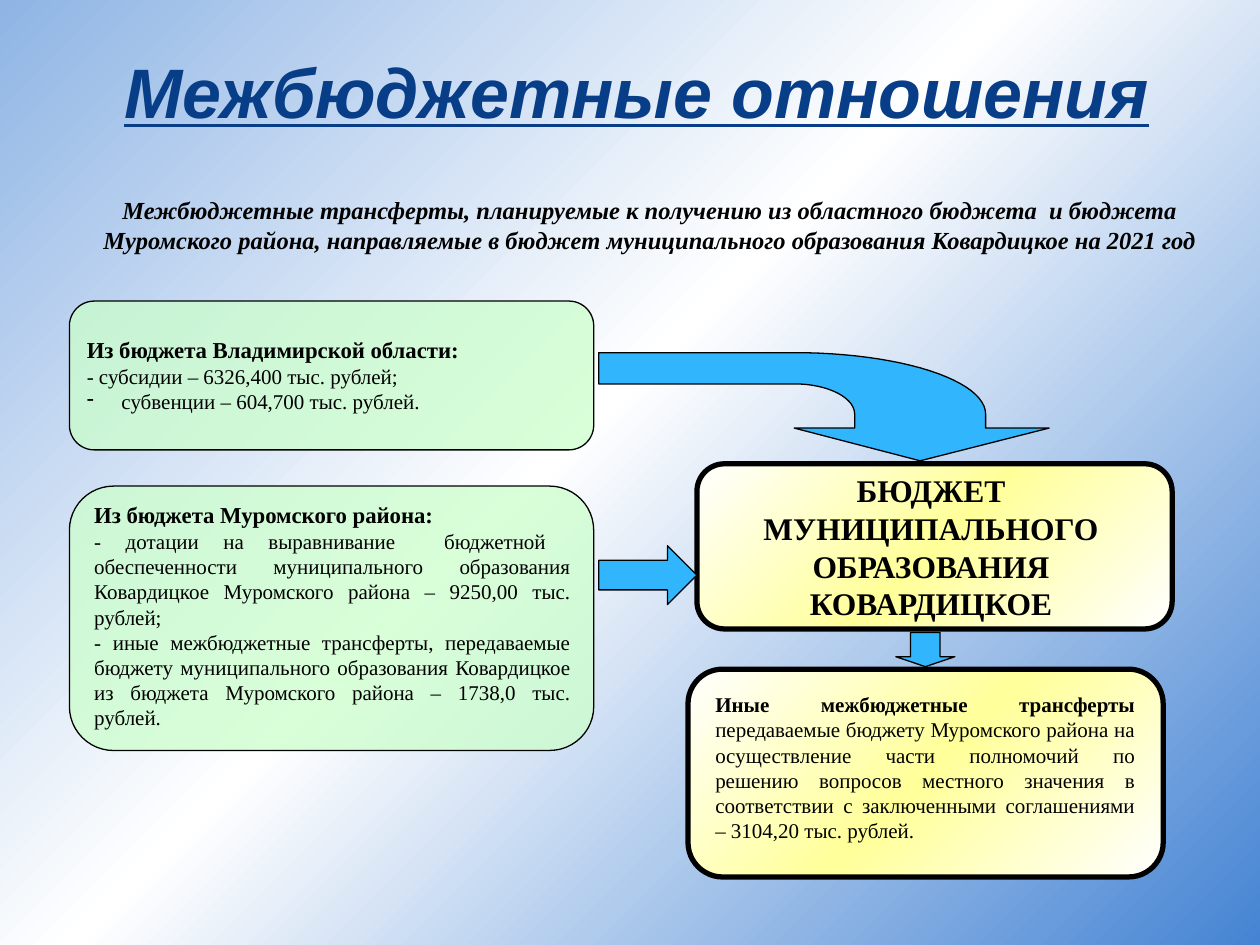
from copy import deepcopy
from dataclasses import dataclass
from math import cos, pi, sin

from lxml.etree import SubElement
from pptx import Presentation
from pptx.dml.color import RGBColor
from pptx.enum.shapes import MSO_SHAPE as Preset
from pptx.enum.text import MSO_ANCHOR as Anchor, PP_ALIGN as Align
from pptx.oxml.ns import qn
from pptx.util import Cm, Pt


@dataclass(frozen=True)
class Theme:
    """Colours, fonts and type sizes of the slide."""
    title_font: str = "Arial"
    body_font: str = "Times New Roman"
    title_color: str = "073E87"
    ink: str = "000000"
    arrow: str = "31B6FD"
    source: str = "CCFFCC"
    source_alpha: int = 74
    backdrop: tuple = ((0, "8FB5E5"), (46, "FFFFFF"), (100, "4584D3"))
    target: tuple = ((0, "FFFFFF"), (50, "FFFF99"), (100, "FFFFFF"))
    title: int = 40
    subtitle: int = 14
    budget: int = 18
    heading: int = 13
    body: int = 12
    thin: float = 0.75
    thick: float = 3


THEME = Theme()


@dataclass(frozen=True)
class Box:
    """A rectangle in centimetres."""
    left: float
    top: float
    width: float
    height: float

    def lengths(self):
        """Return the four sides as slide lengths."""
        return [Cm(n) for n in (self.left, self.top, self.width, self.height)]

    def inner(self, dx, dy, width, height):
        """Return a box offset from this one."""
        return Box(self.left + dx, self.top + dy, width, height)


def paint_gradient(fill, owner, stops):
    """Fill with a diagonal gradient of any number of stops."""
    fill.gradient()
    fill.gradient_angle = 315
    stop_list = next(owner.iter(qn("a:gsLst")))
    pattern = deepcopy(stop_list[0])
    for old in list(stop_list):
        stop_list.remove(old)
    for position, color in stops:
        stop = deepcopy(pattern)
        stop.set("pos", str(position * 1000))
        for child in list(stop):
            stop.remove(child)
        SubElement(stop, qn("a:srgbClr"), val=color)
        stop_list.append(stop)


def paint_solid(fill, color):
    """Fill with one colour."""
    fill.solid()
    fill.fore_color.rgb = RGBColor.from_string(color)


def outline(shape, width):
    """Give a shape a dark outline and no shadow."""
    shape.shadow.inherit = False
    shape.line.color.rgb = RGBColor.from_string(THEME.ink)
    shape.line.width = Pt(width)


def add_run(paragraph, text, size, bold=False, italic=False,
            font=THEME.body_font, color=THEME.ink):
    """Append one formatted run."""
    run = paragraph.add_run()
    run.text = text
    run.font.name, run.font.size = font, Pt(size)
    run.font.bold, run.font.italic = bold, italic
    run.font.color.rgb = RGBColor.from_string(color)
    return run


def add_text(slide, box, paragraphs):
    """Place paragraphs, each an alignment and a list of runs."""
    frame = slide.shapes.add_textbox(*box.lengths()).text_frame
    frame.word_wrap = True
    for index, (align, runs) in enumerate(paragraphs):
        paragraph = frame.add_paragraph() if index else frame.paragraphs[0]
        paragraph.alignment = align
        for text, *style in runs:
            add_run(paragraph, text, *style)
    return frame


def add_dash(paragraph, indent):
    """Turn a paragraph into a dashed list item."""
    properties = paragraph._p.get_or_add_pPr()
    properties.set("marL", str(Cm(indent)))
    properties.set("indent", str(-Cm(indent)))
    SubElement(properties, qn("a:buChar"), char="-")


def add_card(slide, box):
    """Add a rounded card without its fill."""
    return slide.shapes.add_shape(Preset.FLOWCHART_ALTERNATE_PROCESS, *box.lengths())


def source_card(slide, box, text_box, paragraphs):
    """Add a translucent card for a budget that gives money."""
    card = add_card(slide, box)
    paint_solid(card.fill, THEME.source)
    tint = next(card.element.spPr.iter(qn("a:srgbClr")))
    SubElement(tint, qn("a:alpha"), val=str(THEME.source_alpha * 1000))
    outline(card, THEME.thin)
    return add_text(slide, box.inner(*text_box), paragraphs)


def target_card(slide, box, text_box, paragraphs):
    """Add a gradient card for a budget that receives money."""
    card = add_card(slide, box)
    paint_gradient(card.fill, card.element.spPr, THEME.target)
    outline(card, THEME.thick)
    return add_text(slide, box.inner(*text_box), paragraphs)


def finish_arrow(arrow):
    """Give an arrow its fill and outline."""
    paint_solid(arrow.fill, THEME.arrow)
    outline(arrow, THEME.thin)


def block_arrow(slide, preset, box, head):
    """Add a straight block arrow."""
    arrow = slide.shapes.add_shape(preset, *box.lengths())
    arrow.adjustments[0], arrow.adjustments[1] = 0.5, head
    finish_arrow(arrow)


def curved_arrow(slide, box):
    """Add an arrow that runs right and bends down."""
    bend_x, bend_y, band = 3.94, 1.24, 0.63
    outer_x, inner_x, neck, tip = 3.86, 1.22, 1.52, 6.48
    steps = [i * pi / 48 for i in range(25)]
    outer = [(bend_x + outer_x * sin(a), bend_y * (1 - cos(a))) for a in steps]
    inner = [(bend_x + inner_x * sin(a), bend_y - (bend_y - band) * cos(a))
             for a in reversed(steps)]
    points = [(0, 0), *outer, (bend_x + outer_x, neck), (box.width * 1.01, neck),
              (tip, box.height), (bend_x, neck), (bend_x + inner_x, neck),
              *inner, (0, band)]
    places = [(Cm(box.left + x), Cm(box.top + y)) for x, y in points]
    builder = slide.shapes.build_freeform(*places[0])
    builder.add_line_segments(places[1:], close=True)
    finish_arrow(builder.convert_to_shape())


def header(slide, title_box, subtitle_box):
    """Fill the title and the line under it."""
    title = slide.shapes.title
    title.left, title.top, title.width, title.height = title_box.lengths()
    title.text_frame.vertical_anchor = Anchor.MIDDLE
    paragraph = title.text_frame.paragraphs[0]
    paragraph.alignment = Align.CENTER
    add_run(paragraph, "Межбюджетные отношения", THEME.title, True, True,
            THEME.title_font, THEME.title_color).font.underline = True
    add_text(slide, subtitle_box, [(Align.CENTER, [(
        "Межбюджетные трансферты, планируемые к получению из областного бюджета  и бюджета "
        "Муромского района, направляемые в бюджет муниципального образования Ковардицкое "
        "на 2021 год", THEME.subtitle, True, True)])])


def sources(slide, region_box, district_box):
    """Add the regional and district budgets."""
    region = source_card(slide, region_box, (0.1, 0.58, 10.49, 1.83), [
        (Align.LEFT, [("Из бюджета Владимирской области:", THEME.heading, True)]),
        (Align.LEFT, [("- субсидии – 6326,400 тыс. рублей;", THEME.body)]),
        (Align.LEFT, [("субвенции – 604,700 тыс. рублей.", THEME.body)])])
    add_dash(region.paragraphs[2], 0.7)
    source_card(slide, district_box, (0.25, 0.18, 10.11, 4.93), [
        (Align.LEFT, [("Из бюджета Муромского района:", THEME.heading, True)]),
        (Align.JUSTIFY, [(
            "- дотации на выравнивание  бюджетной  обеспеченности муниципального образования "
            "Ковардицкое Муромского района – 9250,00 тыс. рублей;", THEME.body)]),
        (Align.JUSTIFY, [(
            "- иные межбюджетные трансферты, передаваемые бюджету муниципального образования "
            "Ковардицкое из бюджета Муромского района – 1738,0 тыс. рублей.", THEME.body)])])


def targets(slide, budget_box, transfers_box):
    """Add the municipal budget and the transfers it passes on."""
    target_card(slide, budget_box, (0.53, 0.02, 8.38, 3.33), [(Align.CENTER, [
        ("БЮДЖЕТ МУНИЦИПАЛЬНОГО ОБРАЗОВАНИЯ КОВАРДИЦКОЕ", THEME.budget, True)])])
    target_card(slide, transfers_box, (0.3, 0.33, 8.97, 3.33), [(Align.JUSTIFY, [
        ("Иные межбюджетные трансферты ", THEME.body, True),
        ("передаваемые бюджету Муромского района на осуществление части полномочий по решению "
         "вопросов местного значения в соответствии с заключенными соглашениями – 3104,20 "
         "тыс. рублей.", THEME.body)])])


def main():
    """Build and save the slide."""
    deck = Presentation()
    deck.slide_width, deck.slide_height = Cm(25.4), Cm(19.05)
    slide = deck.slides.add_slide(deck.slide_layouts[5])
    paint_gradient(slide.background.fill, slide.element, THEME.backdrop)
    header(slide, Box(1.4, 0.71, 22.86, 2.21), Box(1.8, 3.81, 22.61, 1.45))
    sources(slide, Box(1.4, 6.07, 10.57, 3), Box(1.4, 9.8, 10.57, 5.33))
    targets(slide, Box(14.05, 9.35, 9.58, 3.33), Box(13.87, 13.49, 9.58, 4.19))
    curved_arrow(slide, Box(12.07, 7.11, 8.99, 2.18))
    block_arrow(slide, Preset.DOWN_ARROW, Box(18.06, 12.75, 1.19, 0.69), 0.29)
    block_arrow(slide, Preset.RIGHT_ARROW, Box(12.07, 11, 1.98, 1.19), 0.5)


    deck.save("out.pptx")


if __name__ == "__main__":
    main()
